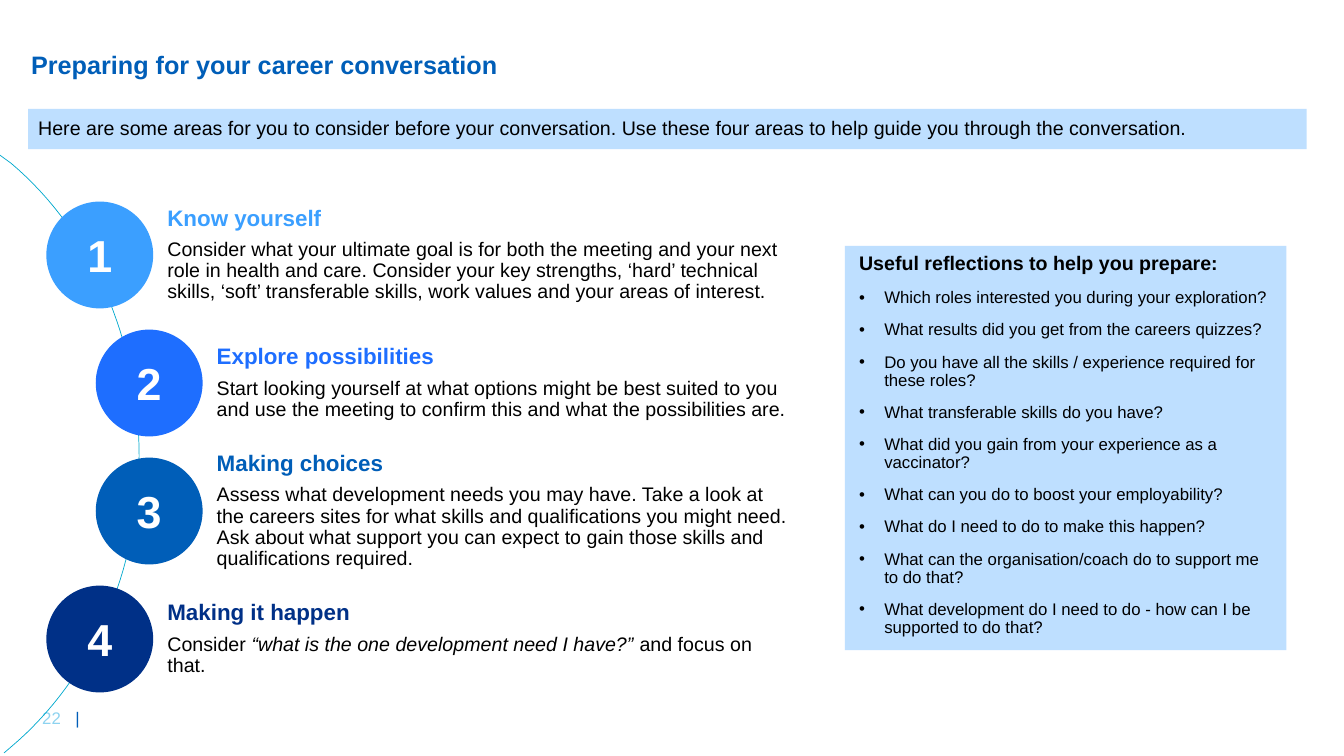
from lxml import etree
from pptx import Presentation
from pptx.dml.color import RGBColor
from pptx.enum import shapes, text
from pptx.oxml.ns import qn
from pptx.util import Inches, Pt

BLACK = RGBColor(0x00, 0x00, 0x00)
WHITE = RGBColor(0xFF, 0xFF, 0xFF)
PALE_BLUE = RGBColor(0xBE, 0xDF, 0xFF)
SKY = RGBColor(0x3B, 0x9F, 0xFF)
BRIGHT_BLUE = RGBColor(0x1E, 0x6E, 0xFF)
BLUE = RGBColor(0x00, 0x5E, 0xB8)
NAVY = RGBColor(0x00, 0x30, 0x87)
AQUA = RGBColor(0x00, 0xA9, 0xCE)
FOLIO_BLUE = RGBColor(0x8D, 0xD3, 0xF0)


def write(frame, words, paragraph=None, size=14, color=BLACK, bold=False, italic=False,
          align=text.PP_ALIGN.LEFT, spacing=0.9, before=0, after=0, bullet=False):
    """Add a run to the given paragraph, or else to a fresh one; return the paragraph."""
    if paragraph is None:
        first = frame.paragraphs[0]
        paragraph = frame.add_paragraph() if first.runs else first
        paragraph.alignment = align
        paragraph.line_spacing = spacing
        paragraph.space_before, paragraph.space_after = Pt(before), Pt(after)
        if bullet:
            properties = paragraph._p.get_or_add_pPr()
            properties.set("marL", str(Inches(0.25)))
            properties.set("indent", str(-Inches(0.25)))
            etree.SubElement(properties, qn("a:buFont")).set("typeface", "Arial")
            etree.SubElement(properties, qn("a:buChar")).set("char", "•")
    run = paragraph.add_run()
    run.text = words
    run.font.name, run.font.size = "Arial", Pt(size)
    run.font.bold, run.font.italic = bold, italic
    run.font.color.rgb = color
    return paragraph


def add_box(left, top, width, height, kind=None, fill=None, anchor=text.MSO_ANCHOR.MIDDLE):
    """Add a filled shape of the given kind, or a text box when there is none."""
    place = [Inches(length) for length in (left, top, width, height)]
    if kind is None:
        box = slide.shapes.add_textbox(*place)
    else:
        box = slide.shapes.add_shape(kind, *place)
        box.shadow.inherit = False
        box.fill.solid()
        box.fill.fore_color.rgb = fill
        box.line.fill.background()
    box.text_frame.word_wrap = True
    box.text_frame.vertical_anchor = anchor
    return box


prs = Presentation()
prs.slide_width, prs.slide_height = Inches(13.33), Inches(7.5)
slide = prs.slides.add_slide(prs.slide_layouts[6])

# Page number
folio = add_box(0.32, 6.97, 0.71, 0.3, anchor=text.MSO_ANCHOR.TOP).text_frame
number = write(folio, "22\t", size=12, color=FOLIO_BLUE, spacing=1.0)
tabs = etree.SubElement(number._p.get_or_add_pPr(), qn("a:tabLst"))
etree.SubElement(tabs, qn("a:tab"), pos=str(Inches(0.33)), algn="l")
write(folio, "|", paragraph=number, size=12, color=BLUE)

# Title and introduction
title = add_box(0.21, 0.32, 9.58, 0.67).text_frame
write(title, "Preparing for your career conversation", size=18, color=BLUE, bold=True)
intro = add_box(0.28, 1.08, 12.68, 0.4, shapes.MSO_SHAPE.RECTANGLE, PALE_BLUE).text_frame
write(intro, "Here are some areas for you to consider before your conversation. "
             "Use these four areas to help guide you through the conversation.")

# Arc behind the steps, traced from two Bézier curves
arc_curves = [
    [(0.11, 1.62), (0.88, 2.27), (1.38, 3.33), (1.38, 4.52)],
    [(1.38, 4.52), (1.38, 5.71), (0.88, 6.76), (0.11, 7.41)],
]
CURVE_STEPS = 30
arc_points = [(0.11, 1.62)]
for curve in arc_curves:
    for step in range(1, CURVE_STEPS + 1):
        t = step / CURVE_STEPS
        weights = ((1 - t) ** 3, 3 * t * (1 - t) ** 2, 3 * t ** 2 * (1 - t), t ** 3)
        arc_points.append(tuple(sum(w * point[axis] for w, point in zip(weights, curve))
                                for axis in (0, 1)))
arc_points.append((0.04, 7.47))
builder = slide.shapes.build_freeform(0, Inches(1.54))
builder.add_line_segments([(Inches(x), Inches(y)) for x, y in arc_points], close=False)
arc = builder.convert_to_shape()
arc.shadow.inherit = False
arc.fill.background()
arc.line.color.rgb = AQUA
arc.line.width = Pt(0.5)

# Four numbered steps; the second part of each advice is in italics
CIRCLE = 1.06
steps = [
    (0.46, SKY, "Know yourself",
     ["Consider what your ultimate goal is for both the meeting and your next role in "
      "health and care. Consider your key strengths, ‘hard’ technical skills, ‘soft’ "
      "transferable skills, work values and your areas of interest."]),
    (0.95, BRIGHT_BLUE, "Explore possibilities",
     ["Start looking yourself at what options might be best suited to you and use the "
      "meeting to confirm this and what the possibilities are."]),
    (0.95, BLUE, "Making choices",
     ["Assess what development needs you may have. Take a look at the careers sites for "
      "what skills and qualifications you might need. Ask about what support you can "
      "expect to gain those skills and qualifications required."]),
    (0.46, NAVY, "Making it happen",
     ["Consider ", "“what is the one development need I have?” ", "and focus on that."]),
]
for index, (left, color, heading, advice) in enumerate(steps):
    top = 2.0 + 1.27 * index
    middle = left + CIRCLE / 2
    description = add_box(middle, top + 0.11, 7.91 - middle, 0.84).text_frame
    description.margin_left = Inches(0.67)
    description.margin_top = description.margin_right = description.margin_bottom = Inches(0.04)
    write(description, heading, size=16, color=color, bold=True, after=6)
    body = None
    for part, words in enumerate(advice):
        body = write(description, words, paragraph=body, italic=part == 1, after=5)

    circle = add_box(left, top, CIRCLE, CIRCLE, shapes.MSO_SHAPE.OVAL, color).text_frame
    write(circle, str(index + 1), size=32, color=WHITE, bold=True, spacing=1.0,
          align=text.PP_ALIGN.CENTER)

# Reflections panel
panel = add_box(8.38, 2.44, 4.38, 4.01, shapes.MSO_SHAPE.RECTANGLE, PALE_BLUE,
                text.MSO_ANCHOR.TOP).text_frame
panel.margin_left, panel.margin_top = Inches(0.14), Inches(0.08)
write(panel, "Useful reflections to help you prepare:", bold=True)
reflections = [
    "Which roles interested you during your exploration?",
    "What results did you get from the careers quizzes?",
    "Do you have all the skills / experience required for these roles?",
    "What transferable skills do you have?",
    "What did you gain from your experience as a vaccinator?",
    "What can you do to boost your employability?",
    "What do I need to do to make this happen?",
    "What can the organisation/coach do to support me to do that?",
    "What development do I need to do - how can I be supported to do that?",
]
for reflection in reflections:
    write(panel, reflection, size=12, before=10, bullet=True)

prs.save("out.pptx")
